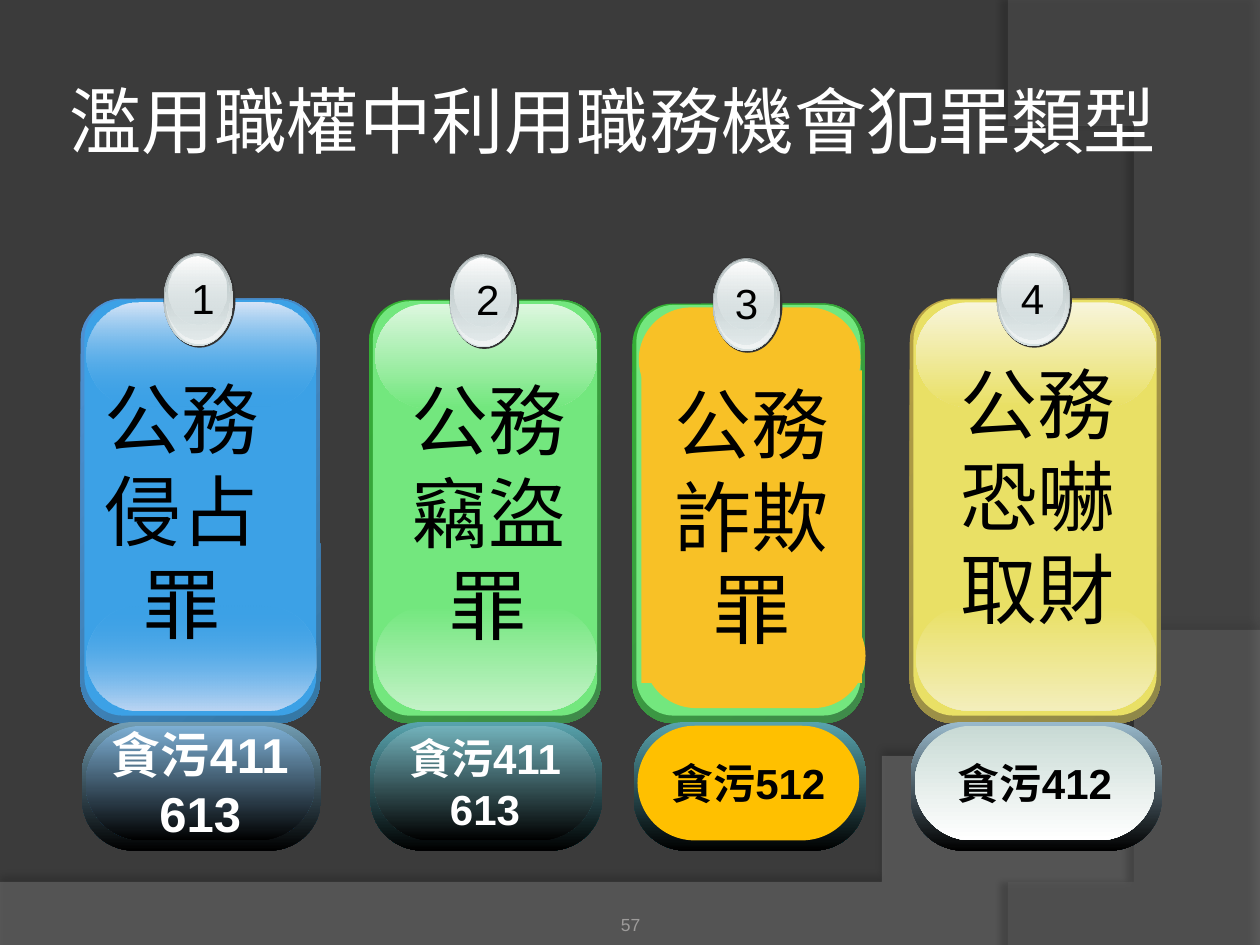
from lxml import etree
from pptx import Presentation
from pptx import util as u
from pptx.dml import color
from pptx.enum import shapes, text
from pptx.oxml.ns import qn

ROUND, OVAL, RECT = (shapes.MSO_SHAPE.ROUNDED_RECTANGLE, shapes.MSO_SHAPE.OVAL,
                     shapes.MSO_SHAPE.RECTANGLE)
SHINE = [  # left, top, width, height as shares of the badge, then fill
    (0, 0, 1, 1, "333333"),
    (0, 0.01, 0.97, 0.97, (("99A1A2", 100), ("D6E1E2", 100))),
    (0.02, 0.01, 0.94, 0.95, (("D6E1E2", 0), ("F2F5F5", 100))),
    (0.02, 0.03, 0.9, 0.88, (("C1CBCC", 100), ("D6E1E2", 48))),
    (0.07, 0.05, 0.8, 0.71, (("FFFFFF", 100), ("D6E1E2", 38))),
]
CARDS = [
    dict(box=(0.64, 2.37, 1.9, 3.37), rim=("4E91D4", "3477A4"), face="3CA1E6",
         top=(("D7E5F7", 100), ("3CA1E6", 0)), bottom=(("3CA1E6", 0), ("BDD6F3", 100)),
         number="1", number_box=(1.42, 0.31), label="公務侵占罪", label_box=(0.71, 2.9, 1.47, 2.5),
         base="729EB4", pill=("7DAFD4", "000000"), law=["貪污411", "613"], size=28),
    dict(box=(2.93, 2.38, 1.84, 3.36), rim=("34B034", "3F8B4A"), face="73E77E",
         top=("DDF7DF", "73E77E"), bottom=("73E77E", "C3F2C7"),
         number="2", number_box=(3.68, 0.3), label="公務竊盜罪", label_box=(3, 2.91, 1.75, 2.49),
         base="58A4AE", pill=("72B2BB", "000000"), law=["貪污411", "613"]),
    dict(box=(5.02, 2.41, 1.84, 3.33), rim=("34B034", "3F8B4A"), face="73E77E",
         top="F8C126", bottom="F8C126", bottom_shift=0.04, label_fill="F8C126",
         number="3", number_box=(5.73, 0.39), label="公務詐欺罪", label_box=(5.09, 2.94, 1.75, 2.48),
         base="58A4AE", pill="FFC000", law=["貪污512"], ink="000000"),
    dict(box=(7.22, 2.37, 1.99, 3.37), rim=("B59F43", "8F8849"), face="E9E065",
         top=("F8F5DB", "E9E065"), bottom=("E9E065", "F3EEBB"),
         number="4", number_box=(8, 0.39), label="公務恐嚇取財", label_box=(7.29, 2.78, 1.89, 2.5),
         base="99BACC", pill=("C8DAD4", "FFFFFF"), law=["貪污412"], ink="000000"),
]


def rgb(value):
    """Turn a hex string into a colour."""
    return color.RGBColor.from_string(value)


def set_alpha(clr, percent):
    """Give a colour element an opacity."""
    etree.SubElement(clr, qn("a:alpha")).set("val", str(percent * 1000))


def paint(sp, fill, angle=90):
    """Fill a shape with one colour or a two-stop gradient, without line or shadow."""
    sp.shadow.inherit = False
    sp.line.fill.background()
    if isinstance(fill, str):
        sp.fill.solid()
        sp.fill.fore_color.rgb = rgb(fill)
        return
    pairs = [(f, 100) if isinstance(f, str) else f for f in fill]
    sp.fill.gradient()
    sp.fill.gradient_angle = 360 - angle
    for stop, (value, _) in zip(sp.fill.gradient_stops, pairs):
        stop.color.rgb = rgb(value)
    for clr, (_, percent) in zip(sp._element.spPr.iter(qn("a:srgbClr")), pairs):
        if percent < 100:
            set_alpha(clr, percent)


def add_shape(parent, kind, box, fill, adj=None, angle=90):
    """Add a painted preset shape."""
    sp = parent.add_shape(kind, *map(u.Inches, box))
    if adj is not None:
        sp.adjustments[0] = adj
    paint(sp, fill, angle)
    return sp


def write(sp, lines, size, ink, font="Arial", bold=False, wrap=True, grow=False,
          align=text.PP_ALIGN.CENTER, anchor=text.MSO_ANCHOR.TOP, insets=None):
    """Write formatted paragraphs into a shape."""
    tf = sp.text_frame
    tf.word_wrap = wrap
    tf.auto_size = text.MSO_AUTO_SIZE.SHAPE_TO_FIT_TEXT if grow else text.MSO_AUTO_SIZE.NONE
    tf.vertical_anchor = anchor
    if insets:
        (tf.margin_left, tf.margin_top,
         tf.margin_right, tf.margin_bottom) = map(u.Inches, insets)
    for i, line in enumerate(lines):
        p = tf.paragraphs[0] if i == 0 else tf.add_paragraph()
        p.alignment = align
        r = p.add_run()
        r.text = line
        r.font.size, r.font.name, r.font.bold = u.Pt(size), font, bold
        r.font.color.rgb = rgb(ink)


def curve(p0, p1, p2, p3, steps=40):
    """Return points along a cubic curve after its start."""
    ts = [i / steps for i in range(1, steps + 1)]
    return [tuple((1 - t) ** 3 * a + 3 * (1 - t) ** 2 * t * b + 3 * (1 - t) * t * t * c + t ** 3 * d
                  for a, b, c, d in zip(p0, p1, p2, p3)) for t in ts]


def add_wave(s, points, fill, opacity, shade, distance, direction):
    """Add a translucent background outline with a soft shadow."""
    builder = s.shapes.build_freeform(*points[0], scale=u.Inches(1))
    builder.add_line_segments(points[1:], close=True)
    sp = builder.convert_to_shape()
    paint(sp, fill)
    spPr = sp._element.spPr
    set_alpha(next(spPr.iter(qn("a:srgbClr"))), opacity)
    shadow = etree.SubElement(spPr.find(qn("a:effectLst")), qn("a:outerShdw"),
                              blurRad=str(u.Pt(4)), dist=str(u.Pt(distance)),
                              dir=str(direction * 60000), rotWithShape="0")
    set_alpha(etree.SubElement(shadow, qn("a:srgbClr"), val="000000"), shade)


def add_badge(parent, box, number, number_box):
    """Add a glossy oval with its number."""
    x, y, w, h = box
    for dx, dy, sw, sh, fill in SHINE:
        add_shape(parent, OVAL, (x + dx * w, y + dy * h, sw * w, sh * h), fill)
    left, width = number_box
    sp = parent.add_textbox(*map(u.Inches, (left, y + 0.11, width, 0.54)))
    write(sp, [number], 24, "000000", wrap=False, grow=True)


def add_card(s, box, rim, face, top, bottom, number, number_box, label, label_box, base, pill,
             law, size=24, ink="FFFFFF", bottom_shift=0, label_fill=None):
    """Add one offence card with badge, label and statute pill."""
    g = s.shapes.add_group_shape().shapes
    x, y, w, h = box
    add_shape(g, ROUND, box, rim, 0.175, 45)
    add_shape(g, ROUND, (x + 0.03, y + 0.01, w - 0.06, h - 0.07), face, 0.167)
    inner = w - 0.08
    add_shape(g, ROUND, (x + 0.05 + bottom_shift, 4.81 - bottom_shift / 2, inner, 0.83),
              bottom, 0.5)
    add_shape(g, ROUND, (x + 0.05, y + 0.03, inner, 0.83), top, 0.5)
    add_badge(g, (x + 0.347 * w, y - 0.37, 0.3 * w, 0.76), number, number_box)
    if label_fill:
        sp = add_shape(g, RECT, label_box, label_fill)
    else:
        sp = g.add_textbox(*map(u.Inches, label_box))
    write(sp, [label], 44, "000000", grow=True)
    add_shape(g, ROUND, (x + 0.01, 5.73, w, 1.02), (base, "000000"), 0.404)
    sp = add_shape(g, ROUND, (x + 0.04, 5.76, inner, 0.91), pill, 0.5)
    write(sp, law, size, ink, bold=True, wrap=False, anchor=text.MSO_ANCHOR.MIDDLE)


def add_title(s, words):
    """Place the title in front of the background."""
    sp = s.shapes.title
    sp.left, sp.top, sp.width, sp.height = map(u.Inches, (0.5, 0.32, 9.35, 1.25))
    write(sp, [words], 41.4, "FFFFFF", font="Roboto", align=text.PP_ALIGN.LEFT,
          anchor=text.MSO_ANCHOR.MIDDLE, insets=(0.05,) * 4)
    s.shapes._spTree.append(sp._element)


def main():
    """Build the slide and save it."""
    prs = Presentation()
    prs.slide_width, prs.slide_height = u.Inches(10), u.Inches(7.5)
    s = prs.slides.add_slide(prs.slide_layouts[5])
    s.background.fill.solid()
    s.background.fill.fore_color.rgb = rgb("3B3B3B")
    add_wave(s, [(0, 7.05), (0, 7.5), (10, 7.5), (10, 5.2)]
             + curve((10, 5.2), (5.59, 7.29), (3.91, 7.19), (0, 7.05)),
             "7F7F7F", 45, 35, 3.5, 270)
    add_wave(s, [(10, 0.02), (10, 7.5), (8.21, 7.5)]
             + curve((8.21, 7.5), (9.35, 6.19), (10.18, 3), (8, 0)),
             "5E5E5E", 40, 45, 4, 180)
    add_title(s, "濫用職權中利用職務機會犯罪類型")
    sp = s.shapes.add_textbox(*map(u.Inches, (3.42, 7.02, 3.17, 0.4)))
    write(sp, ["57"], 10, "9D9B9A", anchor=text.MSO_ANCHOR.BOTTOM, insets=(0, 0.05, 0, 0))
    for card in CARDS:
        add_card(s, **card)
    prs.save("out.pptx")


if __name__ == "__main__":
    main()
